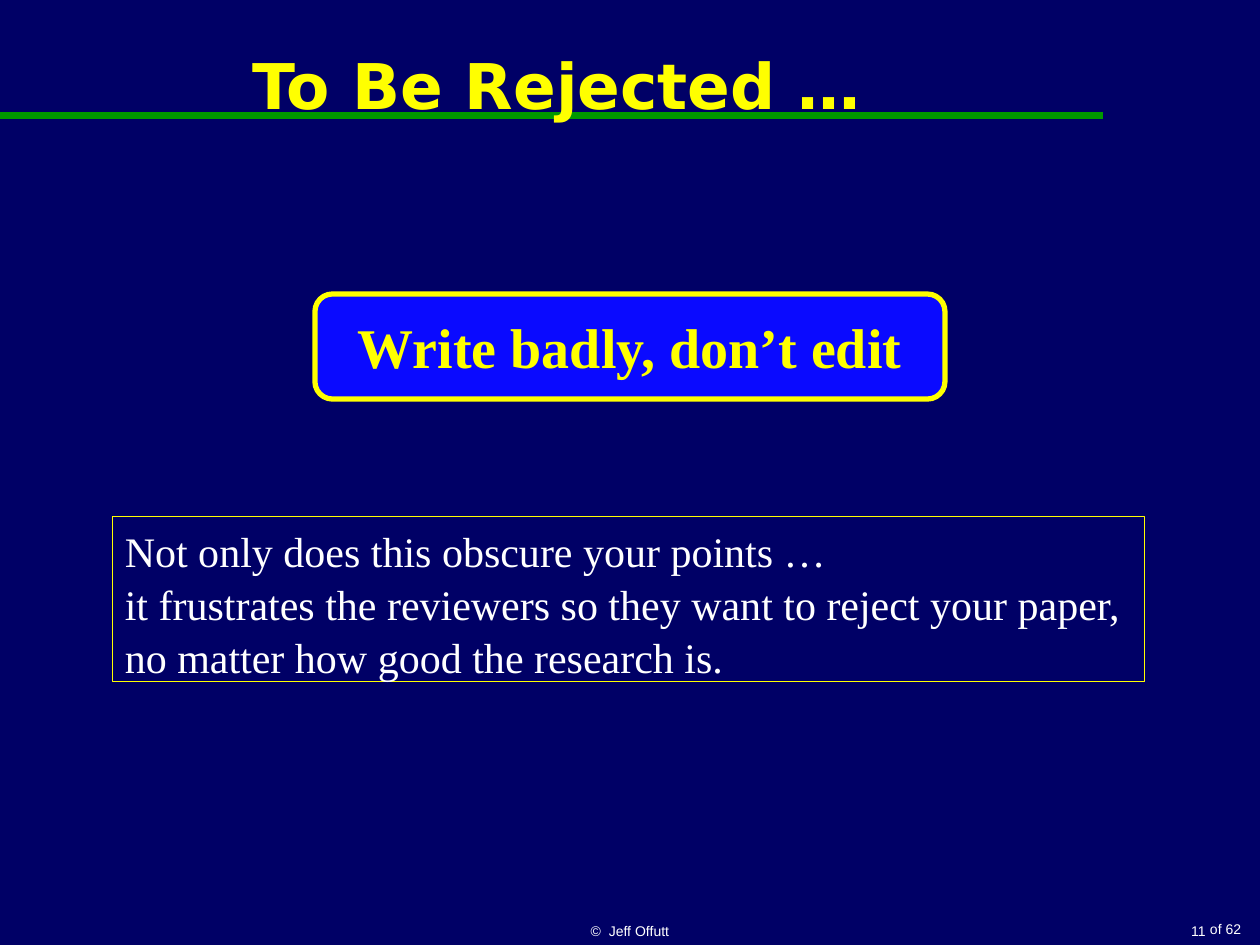
import pptx
import pptx.util
import pptx.dml.color
import pptx.enum.shapes
import pptx.enum.text
import lxml.etree

PT = pptx.util.Pt
SHAPE = pptx.enum.shapes.MSO_SHAPE
ALIGN = pptx.enum.text.PP_ALIGN
ANCHOR = pptx.enum.text.MSO_ANCHOR
NAVY, BLUE, GREEN, YELLOW, WHITE = "000066", "0A0AFF", "009900", "FFFF00", "FFFFFF"
SERIF = "Times New Roman"

deck = pptx.Presentation()
deck.slide_width = pptx.util.Inches(10)
deck.slide_height = pptx.util.Inches(7.5)
column = deck.slide_width / 120
row = deck.slide_height / 90
slide = deck.slides.add_slide(deck.slide_layouts[6])


def paint(target, color):
    if hasattr(target, "solid"):
        target.solid()
        target = target.fore_color
    target.rgb = pptx.dml.color.RGBColor.from_string(color)


def write(text, *, at, size, font="Arial", color=WHITE, bold=False, align=ALIGN.LEFT,
          anchor=ANCHOR.TOP, wrap=True, spacing=None, outline=None, weight=0, fill=None,
          preset=SHAPE.RECTANGLE):
    left, top, width, height = at
    place = [round(n) for n in (left * column, top * row, width * column, height * row)]
    if outline:
        box = slide.shapes.add_shape(preset, *place)
        box.shadow.inherit = False
        paint(box.line.color, outline)
        box.line.width = PT(weight)
        if fill:
            paint(box.fill, fill)
        else:
            box.fill.background()
    else:
        box = slide.shapes.add_textbox(*place)
    frame = box.text_frame
    frame.text = text
    frame.word_wrap = wrap
    frame.vertical_anchor = anchor
    for paragraph in frame.paragraphs:
        paragraph.alignment = align
        paragraph.line_spacing = spacing
        paragraph.font.name = font
        paragraph.font.size = PT(size)
        paragraph.font.bold = bold
        paint(paragraph.font.color, color)


paint(slide.background.fill, NAVY)

title_rule = slide.shapes.add_connector(
    pptx.enum.shapes.MSO_CONNECTOR.STRAIGHT,
    0, round(11 * row), round(105 * column), round(11 * row))
paint(title_rule.line.color, GREEN)
title_rule.line.width = PT(4.5)
lxml.etree.SubElement(title_rule.element.spPr, pptx.oxml.ns.qn("a:effectLst"))

write("To Be Rejected …", at=(1, 0, 104, 16), size=36, font="DejaVu Sans",
      color=YELLOW, bold=True, align=ALIGN.CENTER, anchor=ANCHOR.MIDDLE)

write("Write badly, don’t edit", at=(30, 28, 60, 10), size=32, font=SERIF,
      color=YELLOW, bold=True, align=ALIGN.CENTER, anchor=ANCHOR.MIDDLE,
      outline=YELLOW, weight=3, fill=BLUE, preset=SHAPE.ROUNDED_RECTANGLE)

consequences = [
    "Not only does this obscure your points …",
    "it frustrates the reviewers so they want to reject your paper,",
    "no matter how good the research is.",
]
write("\n".join(consequences), at=(10.7, 49.2, 98.3, 15.7), size=24, font=SERIF,
      wrap=False, spacing=1.05, outline=YELLOW, weight=0.75)

write("©  Jeff Offutt", at=(41, 86, 38, 4), size=8, align=ALIGN.CENTER,
      anchor=ANCHOR.BOTTOM)
write("11", at=(95, 86, 21, 4), size=8, align=ALIGN.RIGHT, anchor=ANCHOR.BOTTOM)
write("of 62", at=(114, 87.1, 5.4, 2.9), size=8, align=ALIGN.RIGHT, wrap=False)

deck.save("out.pptx")
